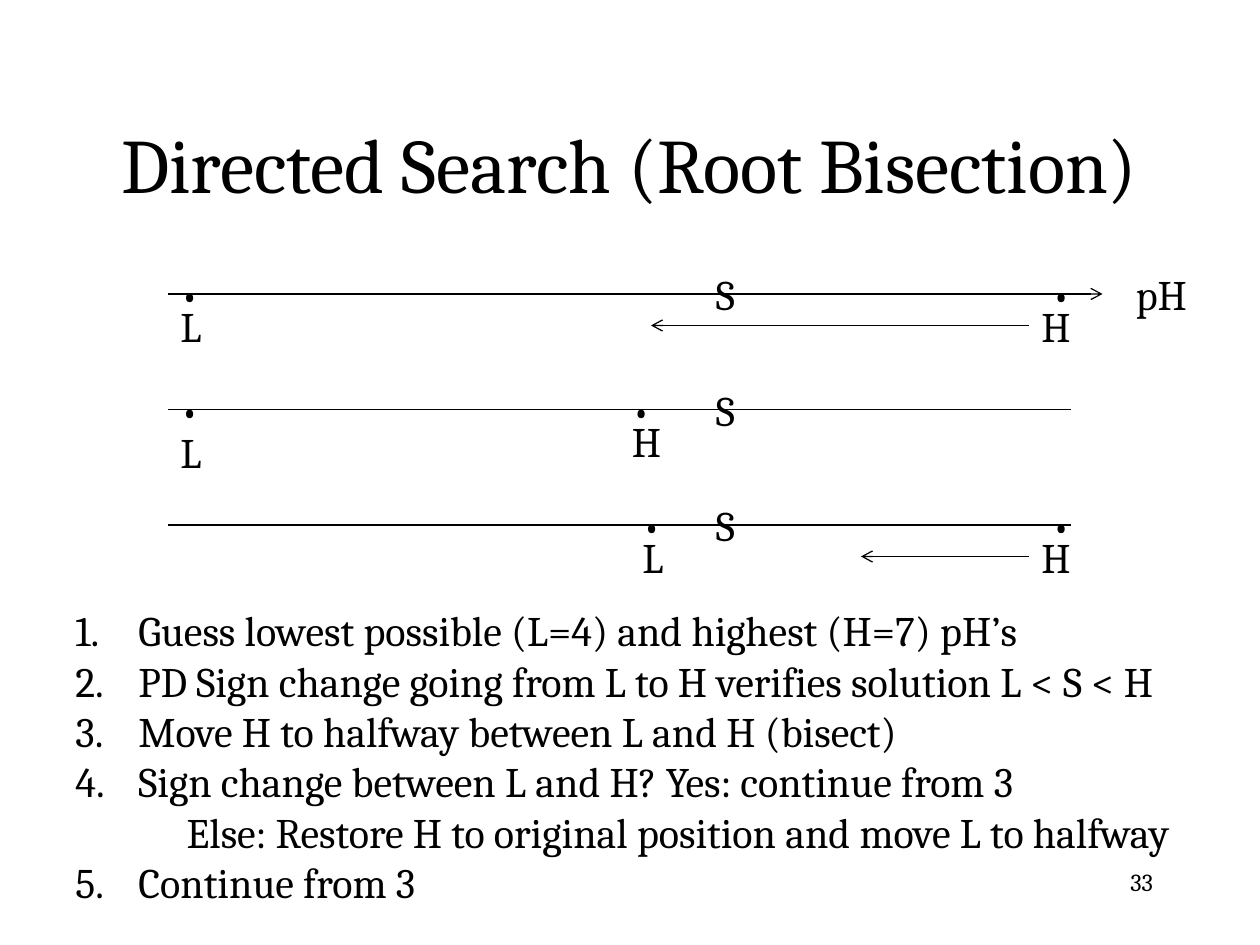
from pptx import Presentation
from pptx.dml.color import RGBColor
from pptx.enum.shapes import MSO_CONNECTOR
from pptx.enum.text import MSO_ANCHOR, PP_ALIGN
from pptx.oxml.ns import qn
from pptx.util import Inches, Pt
from lxml.etree import SubElement

COLORS = {"ink": "000000", "paper": "FFFFFF"}
FONT = "Cambria"
UNIT = Inches(1) / 12  # the slide is a grid of 120 columns by 90 rows
LABEL_H = 6            # rows taken by a one-line label
LABEL_W = {"•": 3.84, "S": 4.68, "L": 4.92, "H": 5.4, "pH": 7.32}


def grid(n):
    return round(n * UNIT)


def add_run(p, text, size):
    r = p.add_run()
    r.text = text
    r.font.size = Pt(size)
    r.font.name = FONT
    r.font.color.rgb = RGBColor.from_string(COLORS["ink"])


def add_box(s, box, wrap=True):
    tf = s.shapes.add_textbox(*map(grid, box)).text_frame
    tf.word_wrap = wrap
    return tf


def add_text(s, box, text, size, align=PP_ALIGN.LEFT, anchor=MSO_ANCHOR.TOP, wrap=True):
    tf = add_box(s, box, wrap)
    tf.vertical_anchor = anchor
    p = tf.paragraphs[0]
    p.alignment = align
    add_run(p, text, size)


def add_label(s, col, row, text):
    add_text(s, (col, row, LABEL_W[text], LABEL_H), text, 24, wrap=False)


def add_line(s, start, end, row, arrow=False):
    line = s.shapes.add_connector(
        MSO_CONNECTOR.STRAIGHT, grid(start), grid(row), grid(end), grid(row))
    line.line.color.rgb = RGBColor.from_string(COLORS["ink"])
    line.line.width = Pt(0.75)
    if arrow:
        SubElement(line.line._get_or_add_ln(), qn("a:tailEnd"), type="arrow")
    SubElement(line._element.spPr, qn("a:effectLst"))


def add_axis(s, box, points, marks=(), arrow=False, move_to=None):
    """Draw one search step: points are dots, marks are (name, column, drop)."""
    left, row, width = box
    add_line(s, left, left + width, row, arrow)
    for col in points:
        add_label(s, col, row - 3, "•")
    for name, col, drop in marks:
        add_label(s, col, row + drop, name)
    add_label(s, left + 51, row - 3, "S")
    if move_to:
        add_line(s, left + 82, move_to, row + 3, arrow=True)


def add_steps(s, box, steps):
    """Draw the list: steps are (number or None, text)."""
    tf = add_box(s, box)
    for i, (number, text) in enumerate(steps):
        p = tf.paragraphs[0] if i == 0 else tf.add_paragraph()
        add_run(p, text, 24)
        pPr = p._p.get_or_add_pPr()
        if number:
            pPr.set("marL", str(grid(6)))
            pPr.set("indent", str(grid(-6)))
            SubElement(pPr, qn("a:buFont"), typeface=FONT)
            bullet = SubElement(pPr, qn("a:buAutoNum"), type="arabicPeriod")
            if number == 5:  # numbering resumes after the unnumbered line
                bullet.set("startAt", str(number))
        else:
            pPr.set("marL", str(grid(10.6)))
            pPr.set("indent", "0")


def main():
    prs = Presentation()
    prs.slide_width, prs.slide_height = grid(120), grid(90)
    s = prs.slides.add_slide(prs.slide_layouts[6])
    s.background.fill.solid()
    s.background.fill.fore_color.rgb = RGBColor.from_string(COLORS["paper"])

    # Title and page number
    add_text(s, (9, 8, 102, 15), "Directed Search (Root Bisection)", 44,
             PP_ALIGN.CENTER, MSO_ANCHOR.MIDDLE)
    add_text(s, (86, 82, 25, 6), "33", 14, PP_ALIGN.RIGHT)

    # Three search steps along the pH axis
    add_axis(s, (16, 28, 89), (16, 99), (("L", 16, 0), ("H", 98, 0), ("pH", 107, -3)),
             arrow=True, move_to=62)
    add_axis(s, (16, 39, 86), (16, 59), (("L", 16, 1), ("H", 59, 0)))
    add_axis(s, (16, 50, 86), (60, 99), (("L", 60, 0), ("H", 98, 0)), move_to=82)

    # Procedure
    add_steps(s, (6, 57, 110, 35), (
        (1, "Guess lowest possible (L=4) and highest (H=7) pH’s"),
        (2, "PD Sign change going from L to H verifies solution L < S < H"),
        (3, "Move H to halfway between L and H (bisect)"),
        (4, "Sign change between L and H? Yes: continue from 3"),
        (None, "Else: Restore H to original position and move L to halfway"),
        (5, "Continue from 3"),
    ))
    prs.save("out.pptx")


if __name__ == "__main__":
    main()
